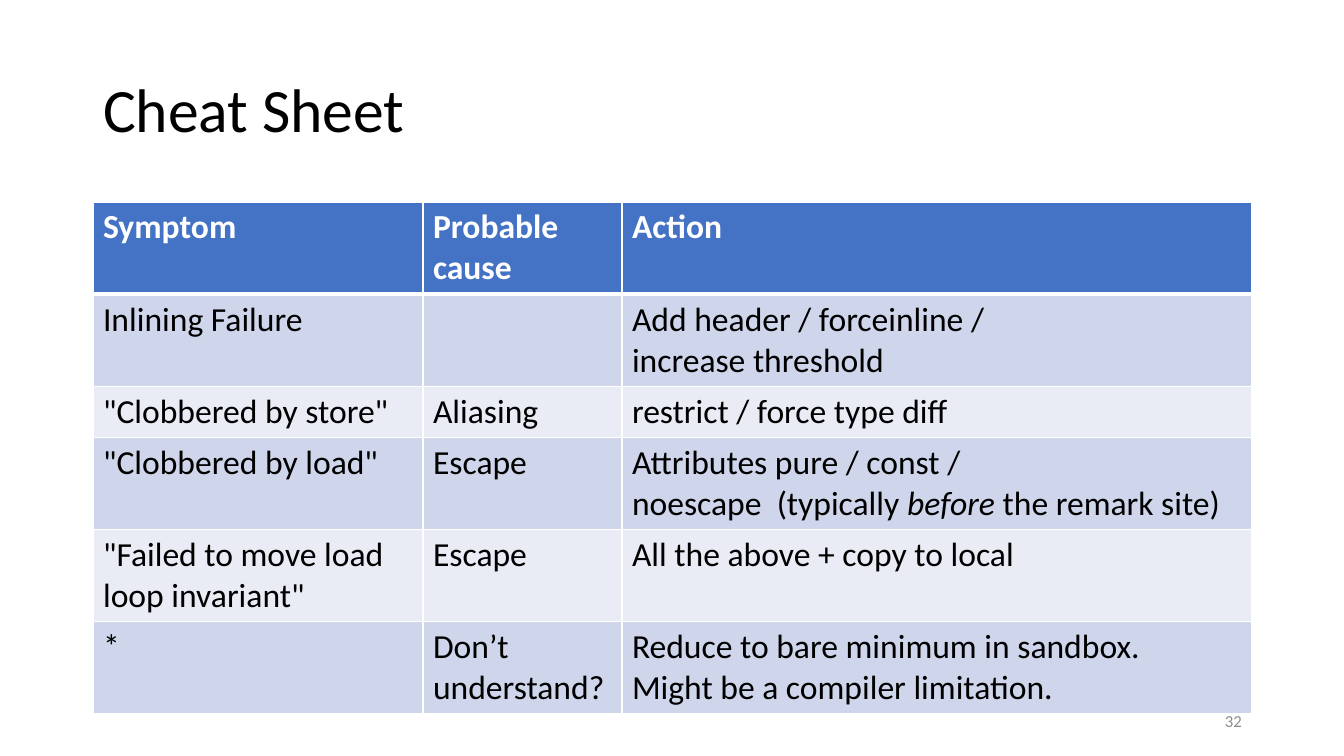
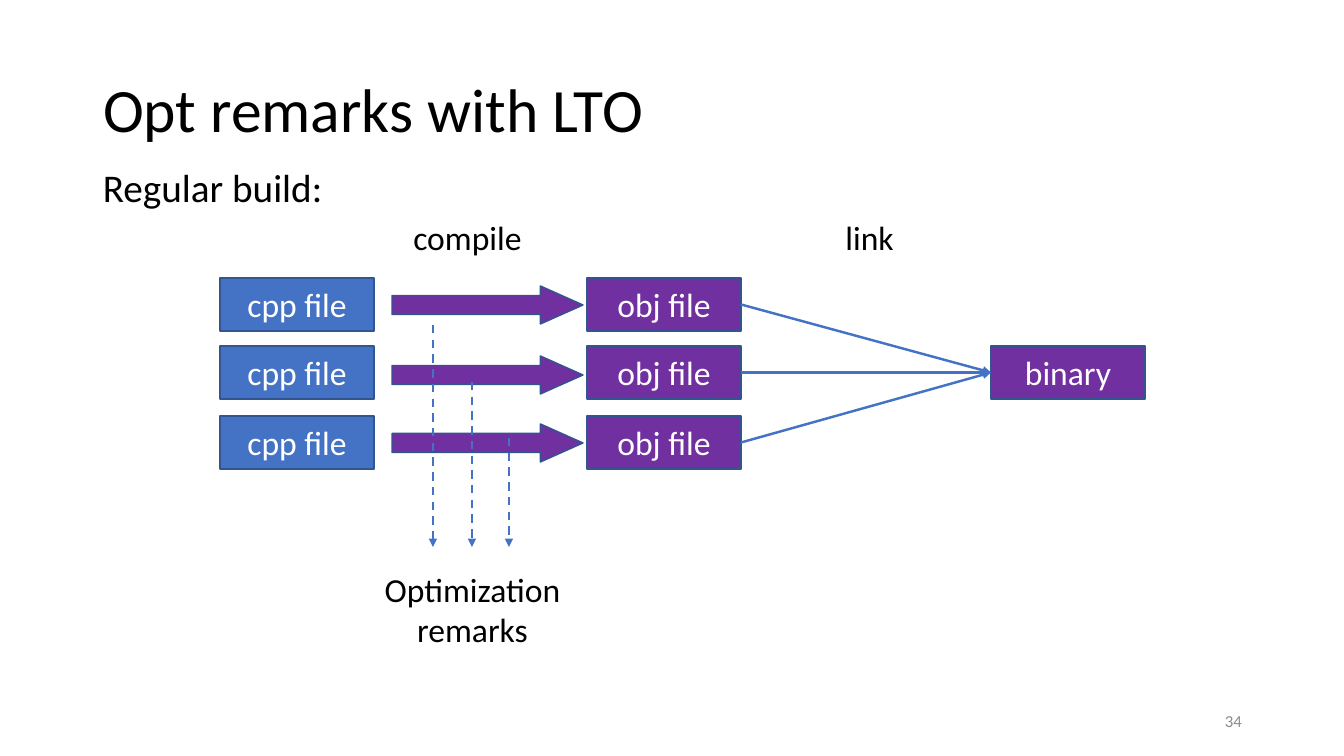
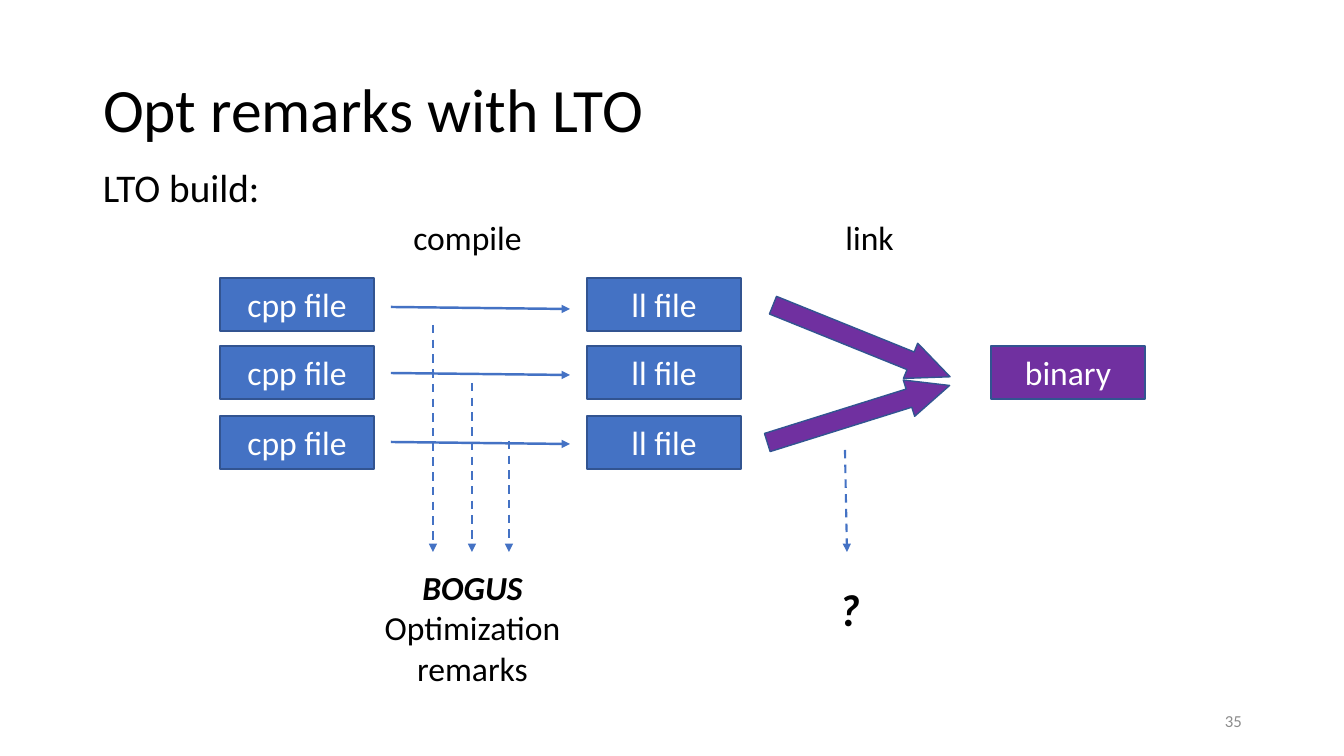
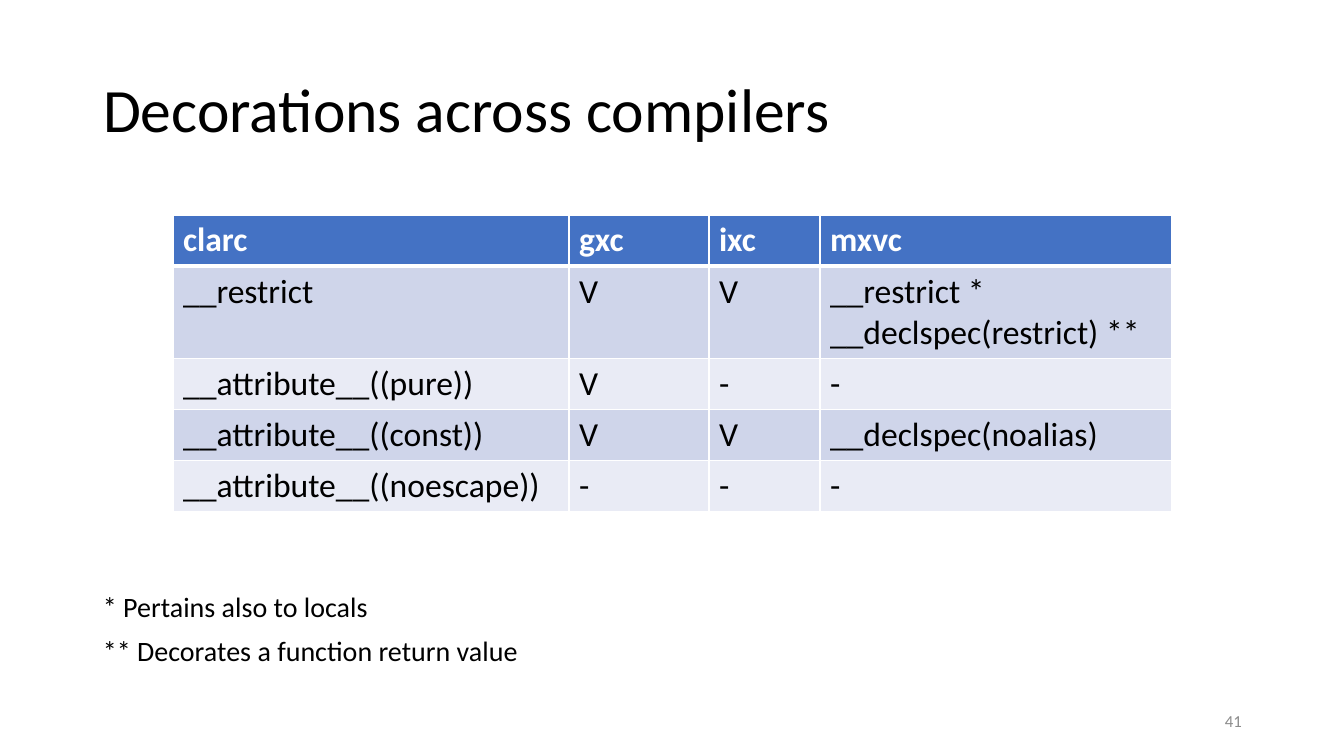
from dataclasses import dataclass, replace
from typing import NamedTuple, Sequence, Union

from lxml import etree
from pptx import Presentation
from pptx import util as u
from pptx.dml.color import RGBColor
from pptx.enum import dml, shapes, text
from pptx.oxml import ns

PX_PER_INCH = 100.8


def px(n: int) -> u.Emu:
    return u.Inches(n / PX_PER_INCH)


class Run(NamedTuple):
    text: str
    bold: bool = False
    italic: bool = False


class Box(NamedTuple):
    x: int
    y: int
    w: int
    h: int

    def emu(self) -> list:
        return [px(n) for n in self]


class Row(NamedTuple):
    """A table row; lines is the number of text lines in its tallest cell."""
    lines: int
    cells: Sequence


class Line(NamedTuple):
    x1: int
    y1: int
    x2: int
    y2: int


class BlockArrow(NamedTuple):
    box: Box
    angle: float = 0


Para = Union[str, Sequence[Run]]


@dataclass(frozen=True)
class Style:
    size: int
    color: RGBColor
    bold: bool = False
    align: text.PP_ALIGN = text.PP_ALIGN.LEFT
    anchor: text.MSO_ANCHOR = text.MSO_ANCHOR.TOP
    spacing: float = 1.0
    before: int = 0


@dataclass(frozen=True)
class Theme:
    font: str = "Calibri"
    black: RGBColor = RGBColor(0x00, 0x00, 0x00)
    white: RGBColor = RGBColor(0xFF, 0xFF, 0xFF)
    grey: RGBColor = RGBColor(0x8C, 0x8C, 0x8C)
    blue: RGBColor = RGBColor(0x44, 0x72, 0xC4)
    purple: RGBColor = RGBColor(0x70, 0x30, 0xA0)
    outline: RGBColor = RGBColor(0x32, 0x54, 0x91)
    bands: tuple = (RGBColor(0xCF, 0xD5, 0xEA), RGBColor(0xE9, 0xEB, 0xF5))
    title_size: int = 44
    body_size: int = 28
    mark_size: int = 32
    text_size: int = 24
    note_size: int = 20
    number_size: int = 12
    outline_width: float = 1
    solid_width: float = 1.75
    dash_width: float = 1.5
    border: int = 1
    header_border: int = 3


T = Theme()
MIDDLE, CENTER = text.MSO_ANCHOR.MIDDLE, text.PP_ALIGN.CENTER
TITLE = Style(T.title_size, T.black, anchor=MIDDLE, spacing=0.9)
BODY = Style(T.body_size, T.black, spacing=0.9, before=10)
NOTE = replace(BODY, size=T.note_size)
NUMBER = Style(T.number_size, T.grey, align=text.PP_ALIGN.RIGHT, anchor=MIDDLE)
CELL = Style(T.text_size, T.black)
HEADER = replace(CELL, color=T.white, bold=True)
LABEL = replace(CELL, align=CENTER)
MARK = replace(LABEL, size=T.mark_size)
NODE = replace(LABEL, color=T.white, anchor=MIDDLE)

TITLE_BOX = Box(93, 40, 1159, 146)
SUBTITLE_BOX = Box(93, 164, 1159, 480)
NUMBER_BOX = Box(950, 701, 302, 40)
NODE_W, NODE_H = 154, 53
NODE_TOPS = (278, 346, 416)
CPP_X, OBJECT_X, BINARY_X = 220, 587, 991
ARROW_W, ARROW_H = 191, 38
ARROW_ADJUST = (0.5, 1.12)
DASH_XS = (433, 472, 509)
LINE_H, CELL_MARGINS = 41, 10


def write(tf, paras: Sequence[Para], style: Style) -> None:
    """Fill a text frame; a newline inside a run is a line break."""
    for i, para in enumerate(paras):
        p = tf.paragraphs[0] if i == 0 else tf.add_paragraph()
        p.alignment = style.align
        p.line_spacing = style.spacing
        p.space_before = u.Pt(style.before)
        runs = [Run(para)] if isinstance(para, str) else para
        for run in runs:
            for j, part in enumerate(run.text.split("\n")):
                if j:
                    p.add_line_break()
                r = p.add_run()
                r.text = part
                f = r.font
                f.name, f.size = T.font, u.Pt(style.size)
                f.bold, f.italic = style.bold or run.bold, run.italic
                f.color.rgb = style.color


def write_shape(sp, paras: Sequence[Para], style: Style) -> None:
    tf = sp.text_frame
    tf.word_wrap = True
    tf.auto_size = text.MSO_AUTO_SIZE.NONE
    tf.vertical_anchor = style.anchor
    write(tf, paras, style)


def add_text(s, box: Box, paras: Sequence[Para], style: Style) -> None:
    write_shape(s.shapes.add_textbox(*box.emu()), paras, style)


def new_slide(prs, title: str, number: int):
    layout = prs.slide_layouts.get_by_name("Title Only")
    s = prs.slides.add_slide(layout)
    sp = s.shapes.title
    sp.left, sp.top, sp.width, sp.height = TITLE_BOX.emu()
    write_shape(sp, [title], TITLE)
    add_text(s, NUMBER_BOX, [str(number)], NUMBER)
    return s


def add_preset(s, kind: shapes.MSO_SHAPE, box: Box, fill: RGBColor):
    sp = s.shapes.add_shape(kind, *box.emu())
    sp.shadow.inherit = False
    sp.fill.solid()
    sp.fill.fore_color.rgb = fill
    sp.line.color.rgb = T.outline
    sp.line.width = u.Pt(T.outline_width)
    return sp


def add_node(s, x: int, y: int, label: str, fill: RGBColor):
    box = Box(x, y, NODE_W, NODE_H)
    sp = add_preset(s, shapes.MSO_SHAPE.RECTANGLE, box, fill)
    write_shape(sp, [label], NODE)
    return sp


def add_block_arrow(s, arrow: BlockArrow) -> None:
    sp = add_preset(s, shapes.MSO_SHAPE.RIGHT_ARROW, arrow.box, T.purple)
    for i, value in enumerate(ARROW_ADJUST):
        sp.adjustments[i] = value
    sp.rotation = arrow.angle


def add_arrow(s, line: Line, dashed: bool = False):
    c = s.shapes.add_connector(shapes.MSO_CONNECTOR.STRAIGHT, *map(px, line))
    c.line.color.rgb = T.blue
    c.line.width = u.Pt(T.dash_width if dashed else T.solid_width)
    if dashed:
        c.line.dash_style = dml.MSO_LINE.DASH
    sp_pr = c.line._get_or_add_ln().getparent()
    etree.SubElement(c.line._get_or_add_ln(), ns.qn("a:tailEnd"), type="triangle")
    etree.SubElement(sp_pr, ns.qn("a:effectLst"))
    return c


def set_borders(cell, top: int, bottom: int) -> None:
    tc_pr = cell._tc.get_or_add_tcPr()
    sides = (("L", T.border), ("R", T.border), ("T", top), ("B", bottom))
    for i, (side, width) in enumerate(sides):
        ln = etree.Element(ns.qn(f"a:ln{side}"), w=str(u.Pt(width)))
        fill = etree.SubElement(ln, ns.qn("a:solidFill"))
        etree.SubElement(fill, ns.qn("a:srgbClr"), val=str(T.white))
        tc_pr.insert(i, ln)


def add_table(s, x: int, y: int, widths: Sequence[int], rows: Sequence[Row]) -> None:
    heights = [LINE_H * row.lines + CELL_MARGINS for row in rows]
    box = Box(x, y, sum(widths), sum(heights))
    table = s.shapes.add_table(len(rows), len(widths), *box.emu()).table
    table.horz_banding = False
    for column, width in zip(table.columns, widths):
        column.width = px(width)
    for i, row in enumerate(rows):
        table.rows[i].height = px(heights[i])
        for j, content in enumerate(row.cells):
            cell = table.cell(i, j)
            cell.fill.solid()
            cell.fill.fore_color.rgb = T.bands[(i - 1) % 2] if i else T.blue
            set_borders(cell,
                        top=T.header_border if i == 1 else T.border,
                        bottom=T.border if i else T.header_border)
            if content:
                paras = [content] if isinstance(content, str) else content
                write(cell.text_frame, paras, CELL if i else HEADER)


def add_build(s, subtitle: str, object_label: str, object_fill: RGBColor):
    """Draw the parts both builds share; return the object nodes and the binary."""
    add_text(s, SUBTITLE_BOX, [subtitle], BODY)
    for y in NODE_TOPS:
        add_node(s, CPP_X, y, "cpp file", T.blue)
    objects = [add_node(s, OBJECT_X, y, object_label, object_fill) for y in NODE_TOPS]
    add_text(s, Box(392, 212, 151, 50), ["compile"], LABEL)
    add_text(s, Box(785, 212, 169, 50), ["link"], LABEL)
    return objects, add_node(s, BINARY_X, NODE_TOPS[1], "binary", T.purple)


def add_remark_arrows(s, starts: Sequence[int], end: int) -> None:
    for x, start in zip(DASH_XS, starts):
        add_arrow(s, Line(x, start, x, end), dashed=True)


def cheat_sheet(prs) -> None:
    s = new_slide(prs, "Cheat Sheet", 32)
    remark_site = [Run("noescape  (typically "), Run("before ", italic=True),
                   Run("the remark site)")]
    add_table(s, 93, 202, (330, 199, 630), [
        Row(2, ("Symptom", "Probable cause", "Action")),
        Row(2, ("Inlining Failure", "",
                "Add header / forceinline / \nincrease threshold")),
        Row(1, ('"Clobbered by store"', "Aliasing", "restrict / force type diff")),
        Row(2, ('"Clobbered by load"', "Escape",
                ["Attributes pure / const /", remark_site])),
        Row(2, ('"Failed to move load loop invariant"', "Escape",
                "All the above + copy to local")),
        Row(2, ("*", "Don’t understand?",
                "Reduce to bare minimum in sandbox. \n"
                "Might be a compiler limitation.")),
    ])


def regular_build(prs) -> None:
    s = new_slide(prs, "Opt remarks with LTO", 34)
    objects, binary = add_build(s, "Regular build:", "obj file", T.purple)
    for node in objects:
        c = add_arrow(s, Line(OBJECT_X, 0, BINARY_X, 0))
        c.begin_connect(node, 3)
        c.end_connect(binary, 1)
    for y in (286, 356, 424):
        add_block_arrow(s, BlockArrow(Box(392, y, ARROW_W, ARROW_H)))
    add_remark_arrows(s, (325, 382, 438), 547)
    add_text(s, Box(366, 564, 213, 92), ["Optimization remarks"], LABEL)


def lto_build(prs) -> None:
    s = new_slide(prs, "Opt remarks with LTO", 35)
    add_build(s, "LTO build:", "ll file", T.blue)
    add_remark_arrows(s, (325, 383, 441), 552)
    bogus = [Run("BOGUS", bold=True, italic=True), Run(" Optimization remarks")]
    add_text(s, Box(366, 562, 213, 132), [bogus], LABEL)
    for y in (307, 373, 442):
        add_arrow(s, Line(391, y, 570, y + 2))
    for arrow in (BlockArrow(Box(766, 322, ARROW_W, ARROW_H), 22),
                  BlockArrow(Box(763, 395, ARROW_W, ARROW_H), 342.6)):
        add_block_arrow(s, arrow)
    add_arrow(s, Line(845, 450, 847, 552), dashed=True)
    add_text(s, Box(743, 577, 213, 65), [[Run("?", bold=True, italic=True)]], MARK)


def decorations(prs) -> None:
    s = new_slide(prs, "Decorations across compilers", 41)
    add_text(s, Box(93, 588, 1159, 92),
             ["* Pertains also to locals", "** Decorates a function return value"], NOTE)
    add_table(s, 173, 215, (396, 140, 111, 352), [
        Row(1, ("clarc", "gxc", "ixc", "mxvc")),
        Row(2, ("__restrict", "V", "V", ["__restrict *", "__declspec(restrict) **"])),
        Row(1, ("__attribute__((pure))", "V", "-", "-")),
        Row(1, ("__attribute__((const))", "V", "V", "__declspec(noalias)")),
        Row(1, ("__attribute__((noescape))", "-", "-", "-")),
    ])


def main() -> None:
    prs = Presentation()
    prs.slide_width, prs.slide_height = px(1344), px(756)
    for build in (cheat_sheet, regular_build, lto_build, decorations):
        build(prs)
    prs.save("out.pptx")


if __name__ == "__main__":
    main()
